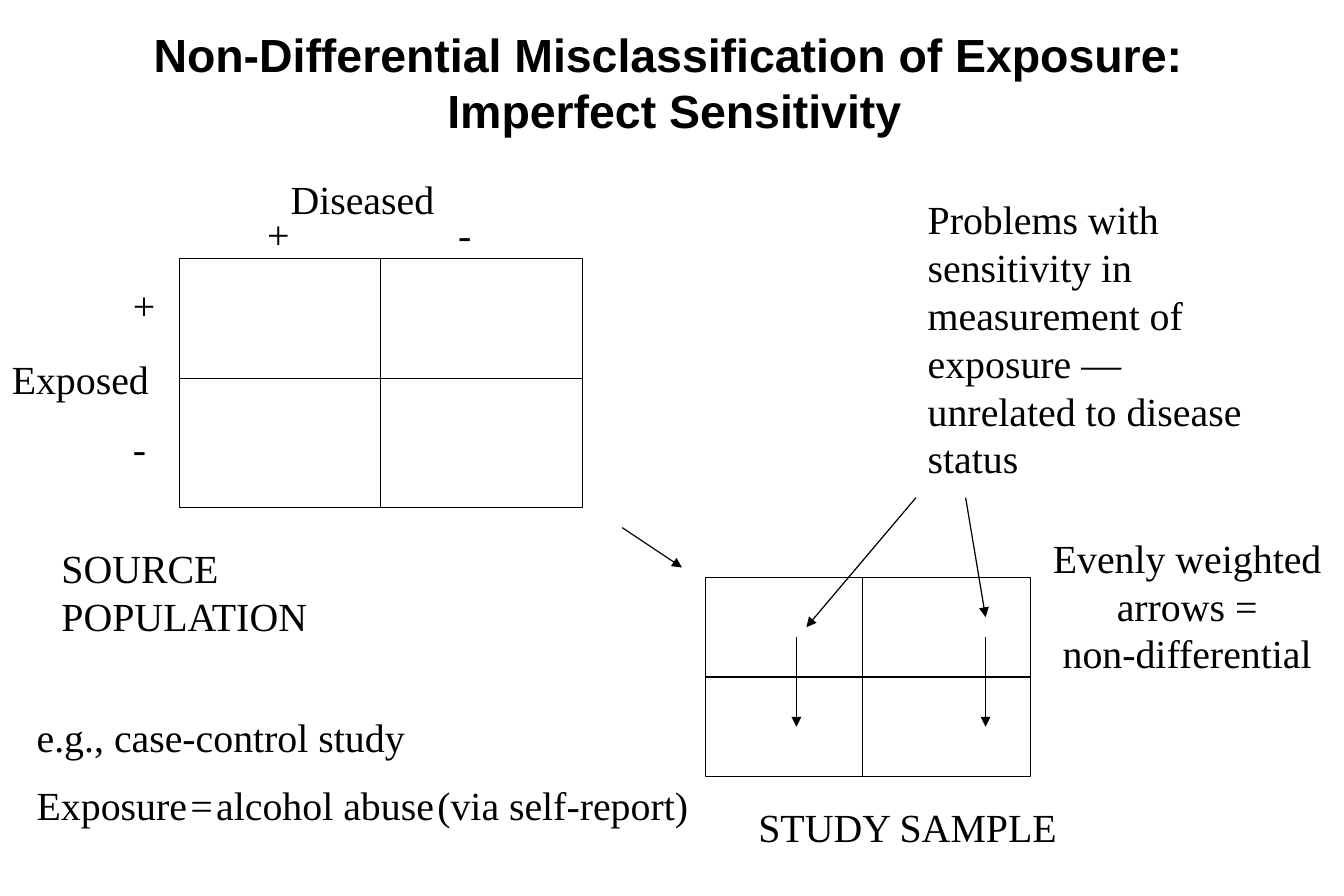
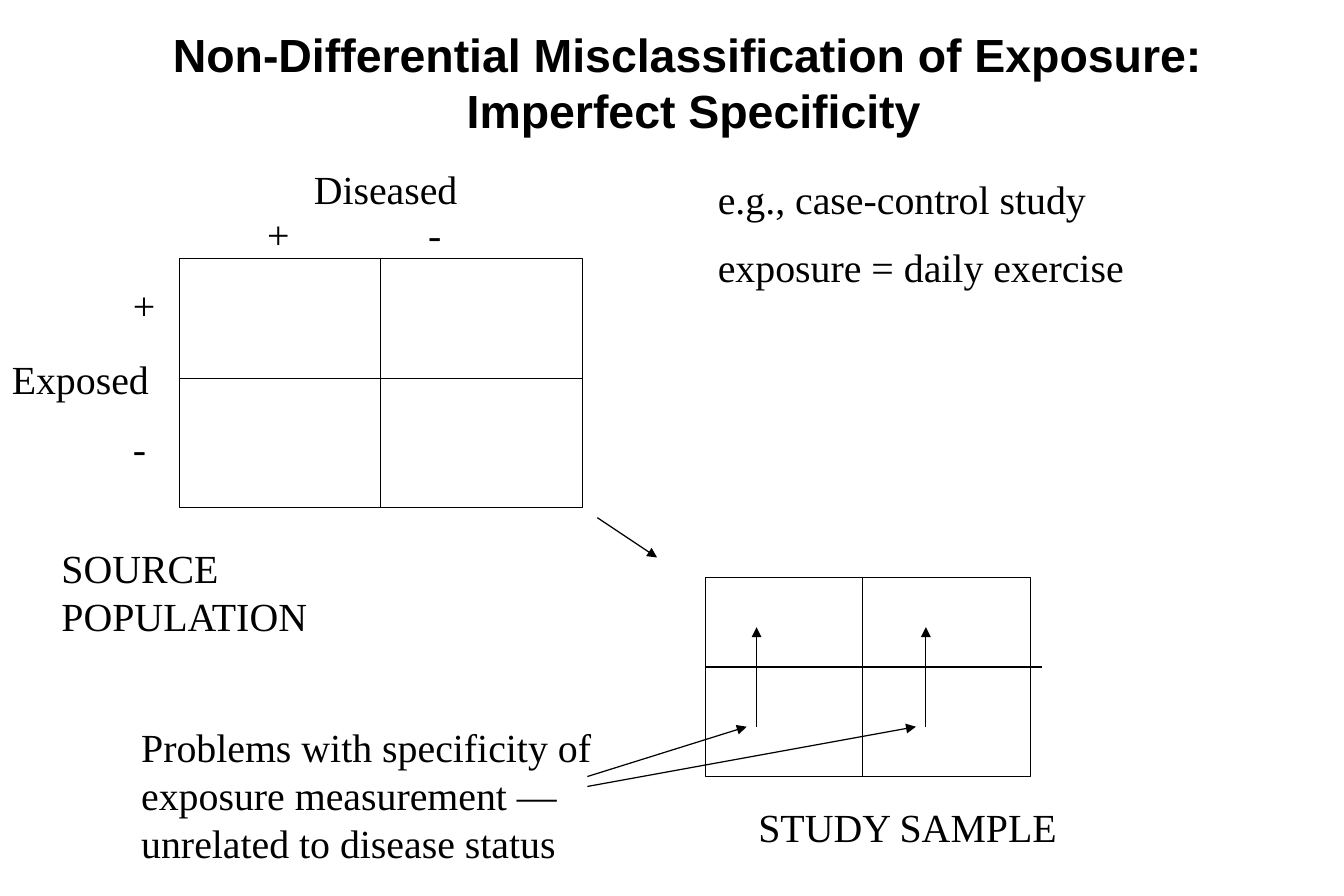
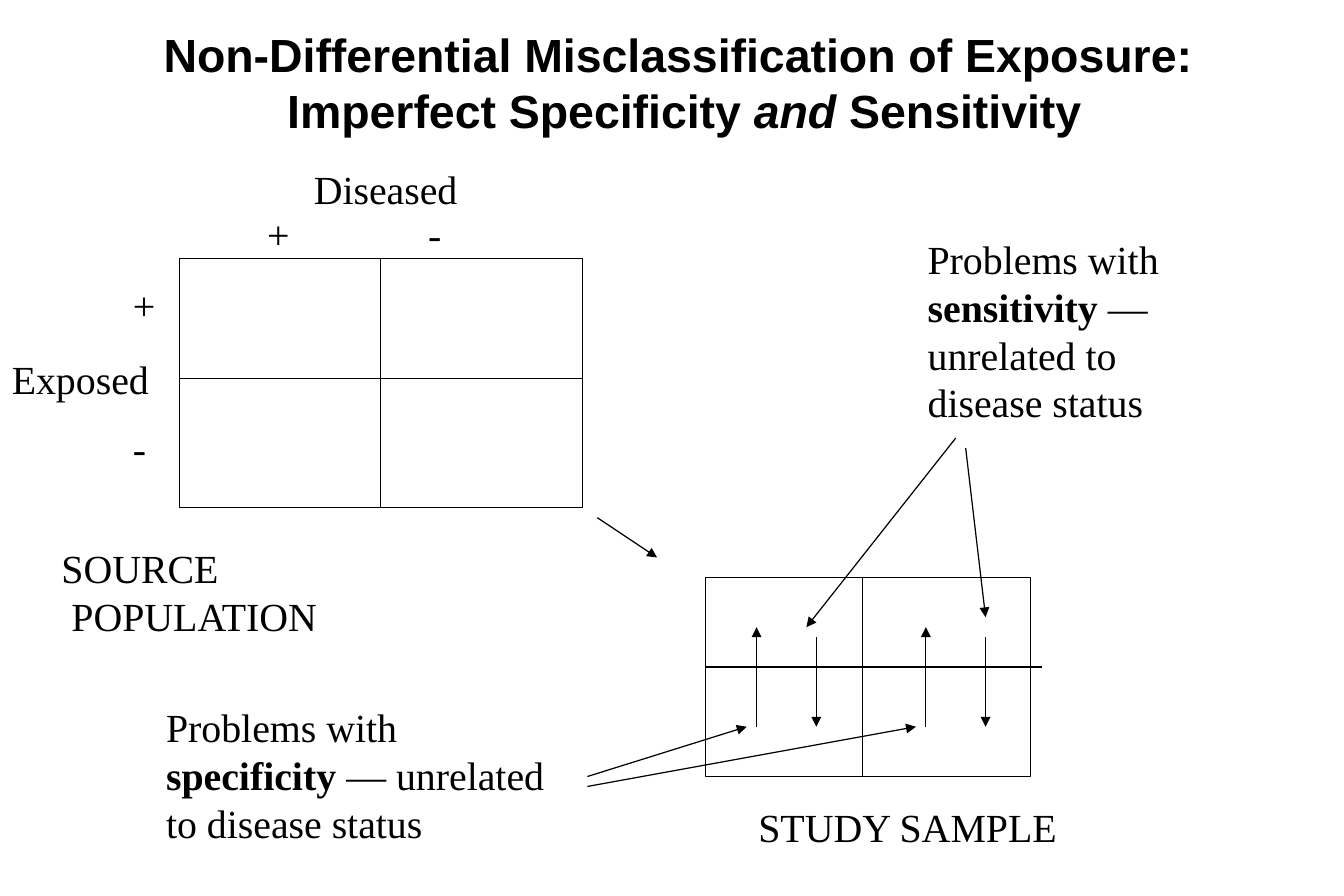
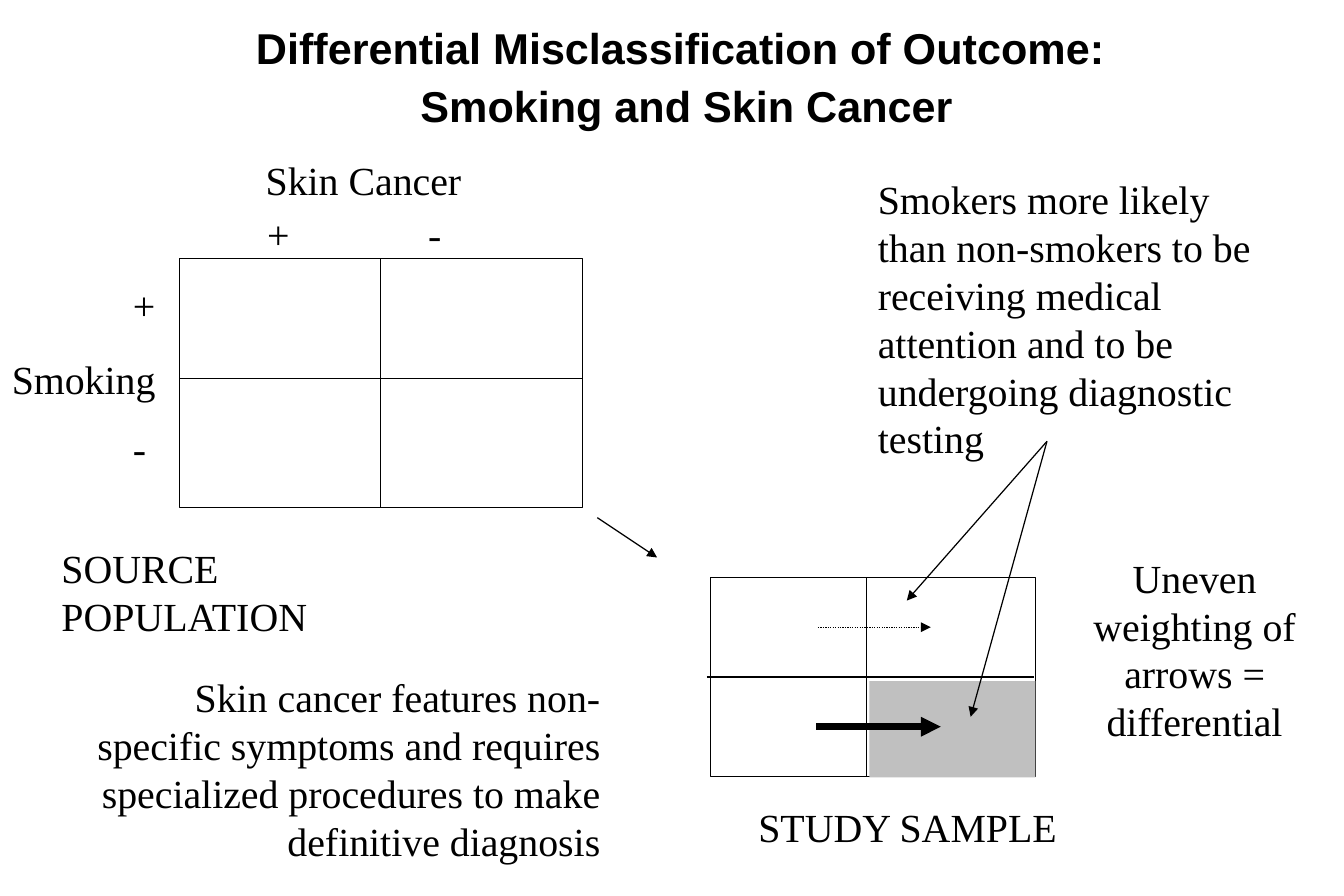
from dataclasses import dataclass
from typing import Optional

from lxml.etree import SubElement
from pptx import Presentation
from pptx.dml.color import RGBColor
from pptx.enum.dml import MSO_LINE
from pptx.enum.shapes import MSO_CONNECTOR, MSO_SHAPE
from pptx.enum.text import MSO_ANCHOR, MSO_AUTO_SIZE, PP_ALIGN
from pptx.oxml.ns import qn
from pptx.util import Pt

BLACK = RGBColor(0x00, 0x00, 0x00)
GREY = RGBColor(0xC0, 0xC0, 0xC0)
SERIF, SANS = "Times New Roman", "Arial"
BODY, HEAD, SMALL = 24, 28, 8
THIN, THICK = 0.75, 4
LEFT, MID, RIGHT = PP_ALIGN.LEFT, PP_ALIGN.CENTER, PP_ALIGN.RIGHT
TITLE_ONLY = 5


@dataclass(frozen=True)
class Run:
    text: str
    bold: bool = False
    italic: bool = False
    size: Optional[float] = None


@dataclass(frozen=True)
class Para:
    runs: tuple[Run, ...]
    before: float = 0
    pitch: Optional[float] = None
    tab: float = 0


@dataclass(frozen=True)
class Box:
    left: float
    top: float
    width: float
    height: float

    def sides(self) -> list[tuple[float, float]]:
        """Middles of the top, left, bottom and right sides."""
        mid_x, mid_y = self.left + self.width / 2, self.top + self.height / 2
        return [(mid_x, self.top), (self.left, mid_y),
                (mid_x, self.top + self.height), (self.left + self.width, mid_y)]


@dataclass(frozen=True)
class Note:
    box: Box
    paras: tuple[Para, ...]
    align: PP_ALIGN = LEFT


@dataclass(frozen=True)
class Grid:
    box: Box
    col: float
    row: float
    start: float
    end: float


@dataclass(frozen=True)
class Arrow:
    x1: float
    y1: float
    x2: float
    y2: float
    width: float = THIN
    dotted: bool = False


@dataclass(frozen=True)
class Page:
    title: Note
    size: float
    top: Note
    side: str
    gap: float
    place: tuple[Para, ...]
    sample: Grid
    arrows: tuple[Arrow, ...]
    notes: tuple[Note, ...]
    shade: Optional[Box] = None


def para(*parts: str | Run, before: float = 0, pitch: Optional[float] = None,
         tab: float = 0) -> Para:
    runs = tuple(Run(part) if isinstance(part, str) else part for part in parts)
    return Para(runs, before, pitch, tab)


def write(shape, note: Note, font: str, size: float, bold: bool = False) -> None:
    """Place a text shape and fill it run by run."""
    box, frame = note.box, shape.text_frame
    shape.left, shape.top = Pt(box.left), Pt(box.top)
    shape.width, shape.height = Pt(box.width), Pt(box.height)
    frame.word_wrap = True
    frame.auto_size = MSO_AUTO_SIZE.NONE
    frame.vertical_anchor = MSO_ANCHOR.TOP
    for i, item in enumerate(note.paras):
        line = frame.add_paragraph() if i else frame.paragraphs[0]
        line.alignment = note.align
        line.space_before = Pt(item.before)
        if item.pitch:
            line.line_spacing = item.pitch
        if item.tab:
            stops = SubElement(line._p.get_or_add_pPr(), qn("a:tabLst"))
            SubElement(stops, qn("a:tab"), pos=str(Pt(item.tab)), algn="l")
        for part in item.runs:
            run = line.add_run()
            run.text = part.text
            run.font.name = font
            run.font.size = Pt(part.size or size)
            run.font.bold = bold or part.bold
            run.font.italic = part.italic
            run.font.color.rgb = BLACK


def label(slide, note: Note) -> None:
    write(slide.shapes.add_textbox(0, 0, 0, 0), note, SERIF, BODY)


def rect(slide, box: Box, fill: Optional[RGBColor] = None):
    """Outlined cell block, or a filled one without an outline."""
    shape = slide.shapes.add_shape(MSO_SHAPE.RECTANGLE, Pt(box.left), Pt(box.top),
                                   Pt(box.width), Pt(box.height))
    shape.shadow.inherit = False
    if fill is None:
        shape.fill.background()
        shape.line.color.rgb = BLACK
        shape.line.width = Pt(THIN)
    else:
        shape.fill.solid()
        shape.fill.fore_color.rgb = fill
        shape.line.fill.background()
    return shape


def stroke(slide, item: Arrow, tip: bool = True):
    line = slide.shapes.add_connector(MSO_CONNECTOR.STRAIGHT, Pt(item.x1), Pt(item.y1),
                                      Pt(item.x2), Pt(item.y2))
    line.line.color.rgb = BLACK
    line.line.width = Pt(item.width)
    if item.dotted:
        line.line.dash_style = MSO_LINE.ROUND_DOT
    props = line._element.spPr
    if tip:
        SubElement(props.get_or_add_ln(), qn("a:tailEnd"), type="triangle")
    SubElement(props, qn("a:effectLst"))
    return line


def draw_grid(slide, grid: Grid) -> None:
    """Two-by-two block; dividers join the frame where they meet a side's middle."""
    box = grid.box
    frame = rect(slide, box)
    sides = box.sides()
    for rule in (Arrow(grid.col, box.top, grid.col, box.top + box.height),
                 Arrow(grid.start, grid.row, grid.end, grid.row)):
        line = stroke(slide, rule, tip=False)
        if (rule.x1, rule.y1) in sides:
            line.begin_connect(frame, sides.index((rule.x1, rule.y1)))
        if (rule.x2, rule.y2) in sides:
            line.end_connect(frame, sides.index((rule.x2, rule.y2)))


def draw_page(deck, page: Page) -> None:
    slide = deck.slides.add_slide(deck.slide_layouts[TITLE_ONLY])
    write(slide.shapes.title, page.title, SANS, page.size, bold=True)
    # Both blocks and their labels
    draw_grid(slide, SOURCE)
    draw_grid(slide, page.sample)
    label(slide, page.top)
    label(slide, Note(Box(0, 210, 110, 36), (para(page.side),)))
    label(slide, Note(Box(154, 123, 155, 36), (para("+\t-", tab=page.gap),)))
    label(slide, Note(Box(73, 165.5, 32, 122), (para("+"), para("-", before=57.6))))
    label(slide, Note(Box(30, 324, 200, 65.5), page.place))
    label(slide, Note(Box(450, 480, 200, 36), (para("STUDY SAMPLE"),)))
    # Remarks, shading and arrows
    for note in page.notes:
        label(slide, note)
    if page.shade:
        rect(slide, page.shade, GREY)
    for arrow in page.arrows:
        stroke(slide, arrow)


def heading(left: float, width: float, *paras: Para, top: float = 12) -> Note:
    return Note(Box(left, top, width, 74), paras, MID)


# Shared blocks, labels and arrows
SOURCE = Grid(Box(108, 156, 243, 150), 229.5, 228, 108, 351)
STUDY = Box(425, 348, 196, 120)
EVEN = Grid(STUDY, 520, 408, 425, 621)
LONG = Grid(STUDY, 520, 402, 425, 628)
SHIFTED = Grid(Box(428, 348, 196, 120), 522, 408, 426, 623)

PLACE = (para("SOURCE POPULATION"),)
DISEASED = Note(Box(182, 96, 120, 36), (para("Diseased"),))
SUBJECT = "Non-Differential Misclassification of Exposure:"
STEP = Arrow(360, 312, 396, 336)
RISE = (Arrow(558, 438, 558, 378), Arrow(456, 438, 456, 378),
        Arrow(354, 468, 450, 438), Arrow(354, 474, 552, 438))
FALL = Arrow(594, 384, 594, 438)
THIN_GAP = Run(" ", size=SMALL)

PAGES = (
    Page(
        title=heading(84, 637, para(SUBJECT), para(" Imperfect Sensitivity")),
        size=HEAD,
        top=Note(Box(168, 102, 120, 36), (para("Diseased"),)),
        side="Exposed", gap=115, place=PLACE, sample=EVEN,
        arrows=(FALL, Arrow(375, 318, 411, 342), Arrow(552, 300, 486, 378),
                Arrow(582, 300, 594, 372), Arrow(480, 384, 480, 438)),
        notes=(
            Note(Box(552, 114, 204, 181), (para(
                "Problems with sensitivity in measurement of exposure — "
                "unrelated to disease status"),)),
            Note(Box(15, 426, 411, 80), (
                para("e.g., case-control study"),
                para("Exposure", THIN_GAP, "=", THIN_GAP, "alcohol abuse", THIN_GAP,
                     "(via self-report)", before=12))),
            Note(Box(627, 318, 177, 94), (
                para("Evenly weighted"), para("arrows ="), para("non-differential")), MID),
        ),
    ),
    Page(
        title=heading(96, 644, para(SUBJECT + " "), para("Imperfect Specificity")),
        size=HEAD, top=DISEASED, side="Exposed", gap=97, place=PLACE, sample=LONG,
        arrows=(STEP, *RISE),
        notes=(
            Note(Box(78, 432, 318, 94), (para(
                "Problems with specificity of exposure measurement — "
                "unrelated to disease status"),)),
            Note(Box(425.5, 102, 370, 80), (
                para("e.g., case-control study"),
                para("exposure = daily exercise", before=12))),
        ),
    ),
    Page(
        title=heading(90, 637, para(SUBJECT), para(
            " Imperfect Specificity ", Run("and", italic=True), " Sensitivity")),
        size=HEAD, top=DISEASED, side="Exposed", gap=97,
        place=(para("SOURCE"), para(" POPULATION")), sample=LONG,
        arrows=(STEP, *RISE, FALL, Arrow(576, 264, 486, 378),
                Arrow(582, 270, 594, 372), Arrow(492, 384, 492, 438)),
        notes=tuple(
            Note(box, (para("Problems with ", Run(word, bold=True),
                            " — unrelated to disease status"),))
            for word, box in (("sensitivity", Box(552, 138, 189, 124)),
                              ("specificity", Box(93, 420, 258, 94)))),
    ),
    Page(
        title=heading(18, 792,
                      para("Differential Misclassification of Outcome: ", pitch=0.7),
                      para("Smoking and Skin Cancer", before=13, pitch=0.7), top=18),
        size=26,
        top=Note(Box(153, 90, 145, 36), (para("Skin Cancer"),)),
        side="Smoking", gap=97, place=PLACE, sample=SHIFTED,
        arrows=(STEP, Arrow(492, 438, 567, 438, THICK),
                Arrow(493, 378, 561, 378, dotted=True),
                Arrow(631, 266, 546.5, 362), Arrow(631, 266, 585, 432)),
        notes=(
            Note(Box(522, 102, 246, 181), (para(
                "Smokers more likely than non-smokers to be receiving medical "
                "attention and to be undergoing diagnostic testing"),)),
            Note(Box(51, 402, 318, 124), (para(
                "Skin cancer features non-specific symptoms and requires "
                "specialized procedures to make definitive diagnosis"),), RIGHT),
            Note(Box(651, 330, 138, 122), (para(
                "Uneven weighting of arrows = differential"),), MID),
        ),
        shade=Box(524, 410.5, 100, 58),
    ),
)


def main() -> None:
    deck = Presentation()
    deck.slide_width, deck.slide_height = Pt(810), Pt(540)
    for page in PAGES:
        draw_page(deck, page)
    deck.save("out.pptx")


if __name__ == "__main__":
    main()
